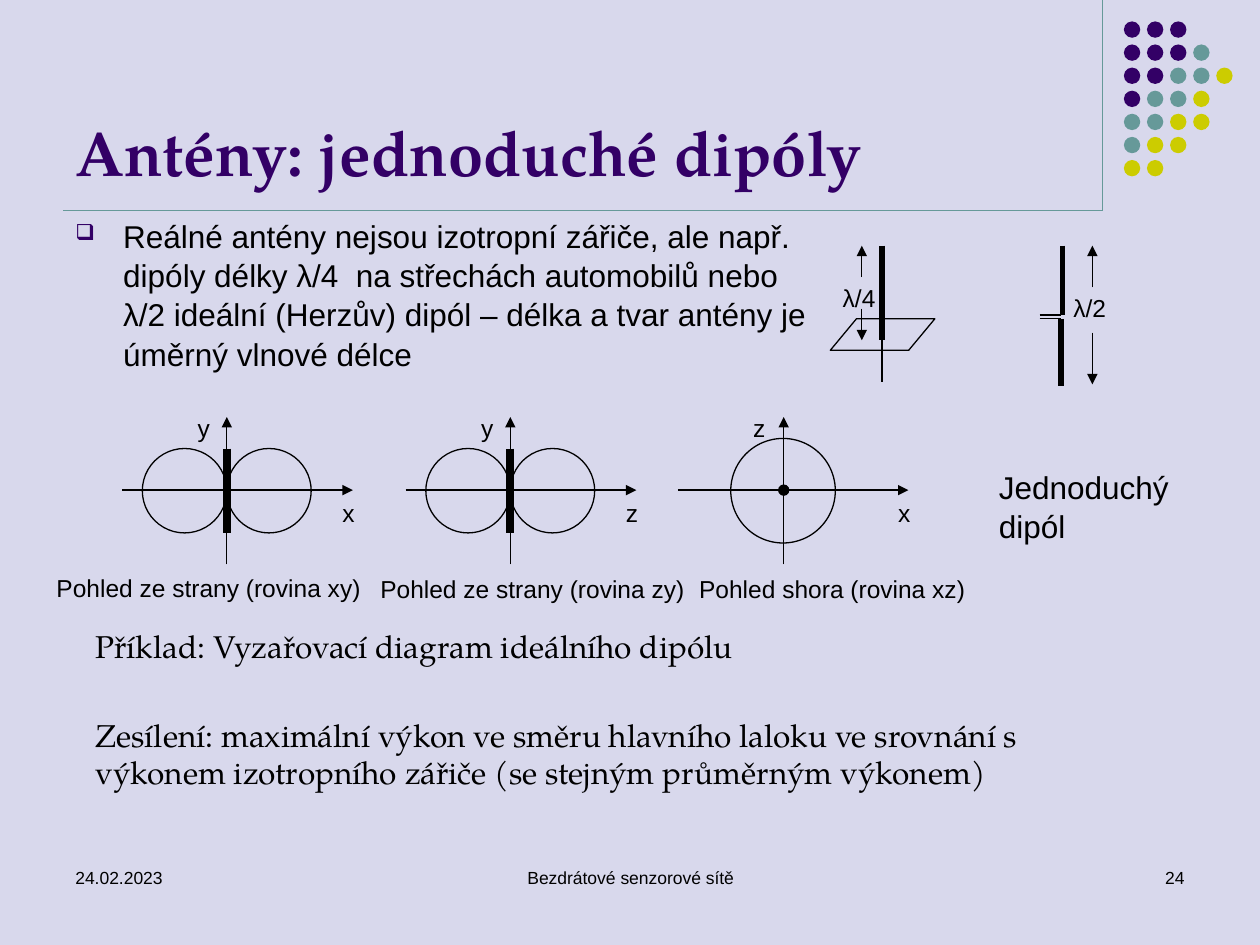
from lxml import etree
from pptx import Presentation
from pptx.dml.color import RGBColor
from pptx.enum.shapes import MSO_CONNECTOR, MSO_SHAPE
from pptx.enum.text import MSO_ANCHOR, PP_ALIGN
from pptx.oxml.ns import qn
from pptx.util import Inches, Pt

LINE = MSO_CONNECTOR.STRAIGHT
OVAL = MSO_SHAPE.OVAL
SLANT = MSO_SHAPE.PARALLELOGRAM
TOP, BOTTOM = MSO_ANCHOR.TOP, MSO_ANCHOR.BOTTOM
LEFT, CENTER, RIGHT = PP_ALIGN.LEFT, PP_ALIGN.CENTER, PP_ALIGN.RIGHT

SANS, SERIF = "Arial", "TeX Gyre Pagella"
BLACK, PURPLE, TEAL, YELLOW, PALE = "000000", "330066", "669999", "CCCC00", "D8D8EC"

DOTS = ["PPP", "PPPT", "PPTTY", "PTTY", "TTYY", "TYY", "YY"]
DOT_FILL = {"P": PURPLE, "T": TEAL, "Y": YELLOW}
DOT_STEP = 1.1 / 6
AXIS_Y = 3.89


def rgb(code):
    return RGBColor.from_string(code)


def add_line(slide, start, end, width=0.75, color=BLACK, arrow=False):
    line = slide.shapes.add_connector(LINE, *map(Inches, start + end))
    line.line.color.rgb = rgb(color)
    line.line.width = Pt(width)
    if arrow:
        etree.SubElement(line.line._get_or_add_ln(), qn("a:tailEnd"), type="triangle")
    etree.SubElement(line._element.spPr, qn("a:effectLst"))


def add_form(slide, kind, box, fill=None, line=BLACK):
    form = slide.shapes.add_shape(kind, *map(Inches, box))
    form.shadow.inherit = False
    if fill:
        form.fill.solid()
        form.fill.fore_color.rgb = rgb(fill)
    else:
        form.fill.background()
    if line:
        form.line.color.rgb = rgb(line)
        form.line.width = Pt(0.75)
    else:
        form.line.fill.background()
    return form


def add_text(slide, box, *texts, size=14, font=SANS, color=BLACK, bold=False,
             align=LEFT, anchor=TOP, wrap=True, pitch=None, gaps=()):
    frame = slide.shapes.add_textbox(*map(Inches, box)).text_frame
    frame.word_wrap = wrap
    frame.vertical_anchor = anchor
    for i, text in enumerate(texts):
        para = frame.add_paragraph() if i else frame.paragraphs[0]
        para.alignment = align
        if pitch:
            para.line_spacing = pitch
        if gaps:
            para.space_before = Pt(gaps[i])
        run = para.add_run()
        run.text = text
        run.font.name = font
        run.font.size = Pt(size)
        run.font.bold = bold
        run.font.color.rgb = rgb(color)
    return frame


def add_bullet(para, mark, color, percent, indent):
    props = para._p.get_or_add_pPr()
    props.set("marL", str(Inches(indent)))
    props.set("indent", str(-Inches(indent)))
    tint = etree.SubElement(props, qn("a:buClr"))
    etree.SubElement(tint, qn("a:srgbClr"), val=color)
    etree.SubElement(props, qn("a:buSzPct"), val=str(percent * 1000))
    etree.SubElement(props, qn("a:buChar"), char=mark)


def add_frame(slide):
    # Corner rules and dot pattern
    add_line(slide, (8.75, 0), (8.75, 1.67), color=TEAL)
    add_line(slide, (0.5, 1.67), (8.75, 1.67), color=TEAL)
    for row, marks in enumerate(DOTS):
        for col, mark in enumerate(marks):
            box = (8.92 + col * DOT_STEP, 0.17 + row * DOT_STEP, 0.13, 0.13)
            add_form(slide, OVAL, box, DOT_FILL[mark], None)

    # Footer
    add_text(slide, (0.5, 6.83, 2.33, 0.5), "24.02.2023", size=10)
    add_text(slide, (3.42, 6.83, 3.17, 0.5), "Bezdrátové senzorové sítě",
             size=10, align=CENTER)
    add_text(slide, (7.17, 6.83, 2.33, 0.5), "24", size=10, align=RIGHT)


def add_axes(slide, mid, left, across, upward, up_x):
    add_line(slide, (mid, 4.48), (mid, 3.31), arrow=True)
    add_line(slide, (left, AXIS_Y), (left + 1.83, AXIS_Y), arrow=True)
    add_text(slide, (left + 1.65, 3.9, 0.3, 0.33), across, wrap=False)
    add_text(slide, (up_x, 3.23, 0.3, 0.33), upward, wrap=False)


def add_side(slide, mid, across, caption):
    # Side view: a lobe on each side of the rod
    add_axes(slide, mid, mid - 0.83, across, "y", mid - 0.33)
    for left in (mid, mid - 0.67):
        add_form(slide, OVAL, (left, 3.56, 0.67, 0.67))
    add_line(slide, (mid, 3.56), (mid, 4.23), 4.5)
    left, top = caption
    add_text(slide, (left, top, 2.63, 0.34),
             f"Pohled ze strany (rovina {across}y)" if across == "z"
             else "Pohled ze strany (rovina xy)", wrap=False)


def add_top(slide):
    # Top view: a ring around the rod
    add_axes(slide, 6.22, 5.38, "x", "z", 5.88)
    add_form(slide, OVAL, (5.8, 3.48, 0.83, 0.83))
    add_form(slide, OVAL, (6.18, 3.85, 0.08, 0.08), BLACK)
    add_text(slide, (5.45, 4.51, 2.38, 0.34), "Pohled shora (rovina xz)", wrap=False)


def add_quarter(slide):
    # Quarter-wave rod on a plane
    plane = add_form(slide, SLANT, (6.59, 2.53, 0.83, 0.25))
    plane.adjustments[0] = 0.83
    add_text(slide, (6.59, 2.2, 0.5, 0.33), "λ/4")
    add_line(slide, (7, 1.95), (7, 2.7), 3)
    add_line(slide, (7, 2.7), (7, 3.03))
    add_line(slide, (6.84, 2.2), (6.84, 1.95), arrow=True)
    add_line(slide, (6.84, 2.45), (6.84, 2.7), arrow=True)


def add_half(slide):
    # Half-wave dipole with its feed
    add_line(slide, (8.43, 1.95), (8.43, 2.5), 3)
    add_line(slide, (8.42, 2.53), (8.42, 3.06), 3)
    for y in (2.5, 2.53):
        add_line(slide, (8.25, y), (8.42, y))
    add_text(slide, (8.42, 2.28, 0.5, 0.33), "λ/2")
    add_line(slide, (8.67, 2.28), (8.67, 1.95), arrow=True)
    add_line(slide, (8.67, 2.64), (8.67, 3.05), arrow=True)


def main():
    deck = Presentation()
    deck.slide_width, deck.slide_height = Inches(10), Inches(7.5)
    slide = deck.slides.add_slide(deck.slide_layouts[6])
    slide.background.fill.solid()
    slide.background.fill.fore_color.rgb = rgb(PALE)
    add_frame(slide)

    # Title and body
    add_text(slide, (0.5, 0.13, 8.25, 1.42), "Antény: jednoduché dipóly",
             size=36, font=SERIF, color=PURPLE, bold=True, anchor=BOTTOM)
    body = add_text(
        slide, (0.5, 1.66, 6, 1.37),
        "Reálné antény nejsou izotropní zářiče, ale např. dipóly délky λ/4  na "
        "střechách automobilů nebo λ/2 ideální (Herzův) dipól – délka a tvar "
        "antény je úměrný vlnové délce", size=18, pitch=1.04, gaps=(3.6,))
    add_bullet(body.paragraphs[0], "❑", PURPLE, 70, 0.38)

    # Antennas and radiation patterns
    add_quarter(slide)
    add_half(slide)
    add_side(slide, 1.8, "x", (0.35, 4.5))
    add_side(slide, 4.05, "z", (2.92, 4.51))
    add_top(slide)
    add_text(slide, (7.83, 3.65, 1.56, 0.71), "Jednoduchý dipól", size=18, pitch=1.04)

    # Closing notes
    add_text(slide, (0.66, 4.93, 8.14, 1.37),
             "Příklad: Vyzařovací diagram ideálního dipólu",
             "Zesílení: maximální výkon ve směru hlavního laloku ve srovnání s "
             "výkonem izotropního zářiče (se stejným průměrným výkonem)",
             size=18, font=SERIF, gaps=(3.6, 28.8))
    deck.save("out.pptx")


if __name__ == "__main__":
    main()
